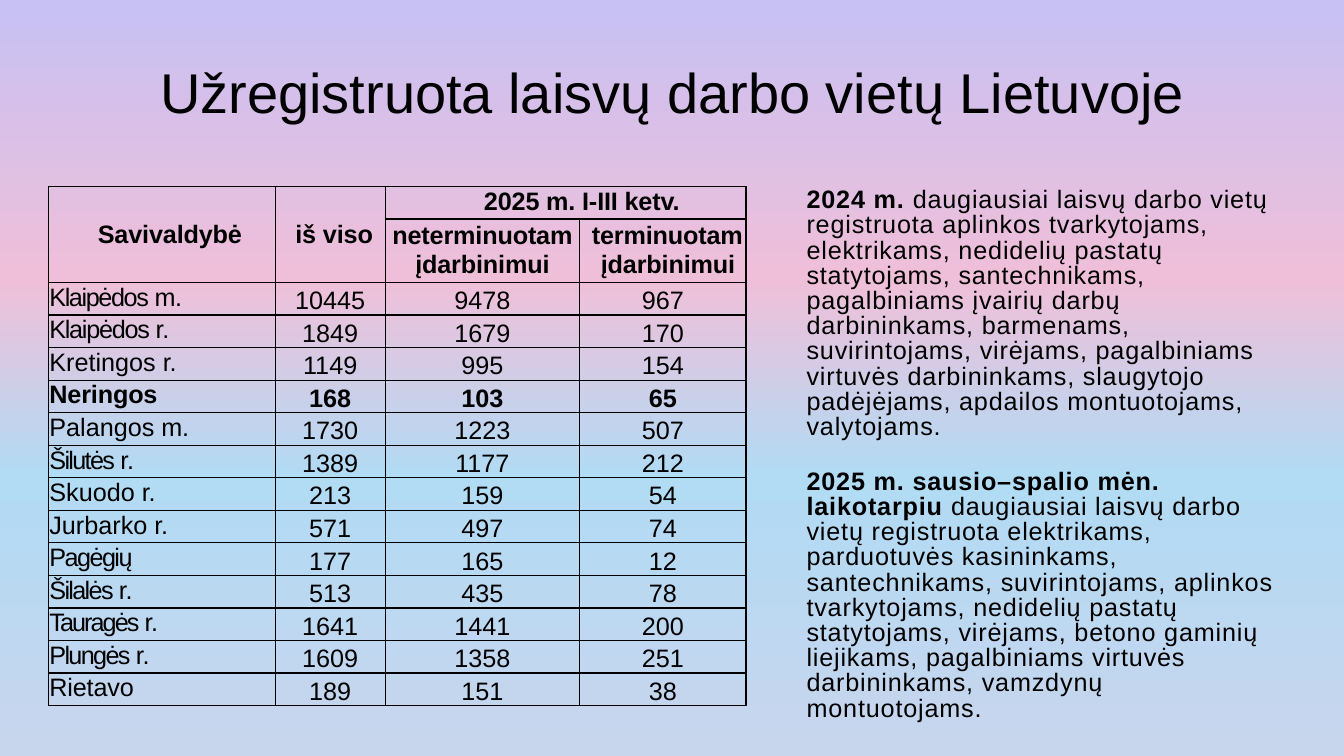
from lxml import etree
from pptx import Presentation
from pptx import util as u
from pptx.dml.color import RGBColor
from pptx.enum import text
from pptx.oxml import ns

BLACK = RGBColor(0x00, 0x00, 0x00)
LILAC = RGBColor(0xC7, 0xC1, 0xF4)
PINK = RGBColor(0xEF, 0xBF, 0xD9)
SKY = RGBColor(0xB2, 0xDB, 0xF4)
MIST = RGBColor(0xC7, 0xD5, 0xED)
CENTER = text.PP_ALIGN.CENTER
MIDDLE, BOTTOM = text.MSO_ANCHOR.MIDDLE, text.MSO_ANCHOR.BOTTOM


def sub(parent, tag, **attrs):
    return etree.SubElement(parent, ns.qn(tag), attrs)


def write(p, runs, size=18, indent=0, **para):
    """Fill a paragraph with (words, bold, letter spacing in points) runs."""
    if indent:
        p._p.get_or_add_pPr().set("marL", str(u.Inches(indent)))
    for name, value in para.items():
        setattr(p, name, value)
    for words, bold, spacing in runs:
        r = p.add_run()
        r.text = words
        fmt = {"name": "Arial", "size": u.Pt(size), "bold": bold}
        for name, value in fmt.items():
            setattr(r.font, name, value)
        r.font.color.rgb = BLACK
        if spacing:
            r._r.get_or_add_rPr().set("spc", str(round(spacing * 100)))


prs = Presentation()
prs.slide_width, prs.slide_height = u.Inches(13.33), u.Inches(7.5)
s = prs.slides.add_slide(prs.slide_layouts[6])

# Background: four-colour gradient from top to bottom
fill = s.background.fill
fill.gradient()
grad = s.background._cSld.find(".//" + ns.qn("a:gradFill"))
for child in list(grad):
    grad.remove(child)
stops = sub(grad, "a:gsLst")
for pos, color in [(0, LILAC), (37, PINK), (63, SKY), (100, MIST)]:
    sub(sub(stops, "a:gs", pos=str(pos * 1000)), "a:srgbClr", val=str(color))
sub(grad, "a:lin", ang="5400000", scaled="0")

# Table grid
DATA = [  # municipality, its ending, letter spacing, total, permanent, temporary
    ("Klaipėdos ", "m.", -1, 10445, 9478, 967),
    ("Klaipėdos ", "r.", -0.9, 1849, 1679, 170),
    ("Kretingos ", "r.", 0, 1149, 995, 154),
    ("Neringos", "", -0.1, 168, 103, 65),
    ("Palangos ", "m.", 0, 1730, 1223, 507),
    ("Šilutės ", "r.", -1.2, 1389, 1177, 212),
    ("Skuodo ", "r.", 0, 213, 159, 54),
    ("Jurbarko ", "r.", 0, 571, 497, 74),
    ("Pagėgių", "", -1.1, 177, 165, 12),
    ("Šilalės ", "r.", -1.2, 513, 435, 78),
    ("Tauragės ", "r.", -1.4, 1641, 1441, 200),
    ("Plungės ", "r.", -1.2, 1609, 1358, 251),
    ("Rietavo", "", -0.1, 189, 151, 38),
]
HEIGHT, TALL = 5.15, 0.63
n_rows = len(DATA) + 2
frame = s.shapes.add_table(n_rows, 4, u.Inches(0.48), u.Inches(1.85),
                           u.Inches(6.92), u.Inches(HEIGHT))
table = frame.table
table.first_row = table.horz_banding = False
for col, width in zip(table.columns, [2.25, 1.09, 1.93, 1.65]):
    col.width = u.Inches(width)
for i, row in enumerate(table.rows):
    row.height = u.Inches(TALL if i == 1 else (HEIGHT - TALL) / (n_rows - 1))

# Black borders, no fill, no margins
for cell in table.iter_cells():
    tcPr = cell._tc.get_or_add_tcPr()
    for side in ("a:lnL", "a:lnR", "a:lnT", "a:lnB"):
        ln = sub(tcPr, side, w=str(u.Pt(1)))
        sub(sub(ln, "a:solidFill"), "a:srgbClr", val=str(BLACK))
    cell.fill.background()
    for margin in ("left", "right", "top", "bottom"):
        setattr(cell, "margin_" + margin, 0)

# Header cells: row, column, last row, last column, top margin, lines with indents
HEADERS = [
    (0, 0, 1, 0, 0, [("Savivaldybė", 0.49)]),
    (0, 1, 1, 1, 0, [("iš viso", 0.2)]),
    (0, 2, 0, 3, 0.01, [("2025 m. I-III ketv.", 0.98)]),
    (1, 2, 1, 2, 0.03, [("neterminuotam", 0), ("įdarbinimui", 0)]),
    (1, 3, 1, 3, 0.03, [("terminuotam", 0.12), ("įdarbinimui", 0.21)]),
]
for top, left, bottom, right, margin, lines in HEADERS:
    cell = table.cell(top, left)
    if (top, left) != (bottom, right):
        cell.merge(table.cell(bottom, right))
    cell.margin_top = u.Inches(margin)
    if bottom > top:
        cell.vertical_anchor = MIDDLE
    tf = cell.text_frame
    for i, (words, indent) in enumerate(lines):
        p = tf.add_paragraph() if i else tf.paragraphs[0]
        write(p, [(words, True, -0.1)], indent=indent,
              alignment=None if indent else CENTER)

# Municipality rows
for i, (name, ending, spacing, *numbers) in enumerate(DATA, start=2):
    bold = name == "Neringos"
    runs = [(name, bold, spacing)] + ([(ending, bold, -0.2)] if ending else [])
    cell = table.cell(i, 0)
    cell.margin_top = u.Inches(0.01)
    write(cell.text_frame.paragraphs[0], runs, indent=0.01)
    for j, number in enumerate(numbers, start=1):
        cell = table.cell(i, j)
        cell.vertical_anchor = BOTTOM
        write(cell.text_frame.paragraphs[0], [(str(number), bold, 0)],
              alignment=CENTER)

# Title
sp = s.shapes.add_textbox(0, u.Inches(0.52), prs.slide_width, u.Inches(0.77))
sp.text_frame.word_wrap = True
write(sp.text_frame.paragraphs[0],
      [("Užregistruota laisvų darbo vietų Lietuvoje", False, 0)],
      size=40, alignment=CENTER)

# Commentary beside the table
COMMENTS = [
    ("2024 m. ",
     "daugiausiai laisvų darbo vietų registruota aplinkos tvarkytojams, "
     "elektrikams, nedidelių pastatų statytojams, santechnikams, pagalbiniams "
     "įvairių darbų darbininkams, barmenams, suvirintojams, virėjams, "
     "pagalbiniams virtuvės darbininkams, slaugytojo padėjėjams, apdailos "
     "montuotojams, valytojams."),
    ("2025 m. sausio–spalio mėn. laikotarpiu ",
     "daugiausiai laisvų darbo vietų registruota elektrikams, parduotuvės "
     "kasininkams, santechnikams, suvirintojams, aplinkos tvarkytojams, "
     "nedidelių pastatų statytojams, virėjams, betono gaminių liejikams, "
     "pagalbiniams virtuvės darbininkams, vamzdynų montuotojams."),
]
sp = s.shapes.add_textbox(u.Inches(7.99), u.Inches(1.85), u.Inches(4.86), u.Inches(5.38))
tf = sp.text_frame
for name, value in {"word_wrap": True, "margin_left": 0,
                    "margin_right": u.Inches(0.15),
                    "margin_top": u.Inches(0.02), "margin_bottom": 0}.items():
    setattr(tf, name, value)
for i, (period, jobs) in enumerate(COMMENTS):
    p = tf.add_paragraph() if i else tf.paragraphs[0]
    write(p, [(period, True, 0.6), (jobs, False, 0.6)], indent=0.01,
          line_spacing=u.Pt(18), space_before=u.Pt(21.2 if i else 0))

prs.save("out.pptx")
